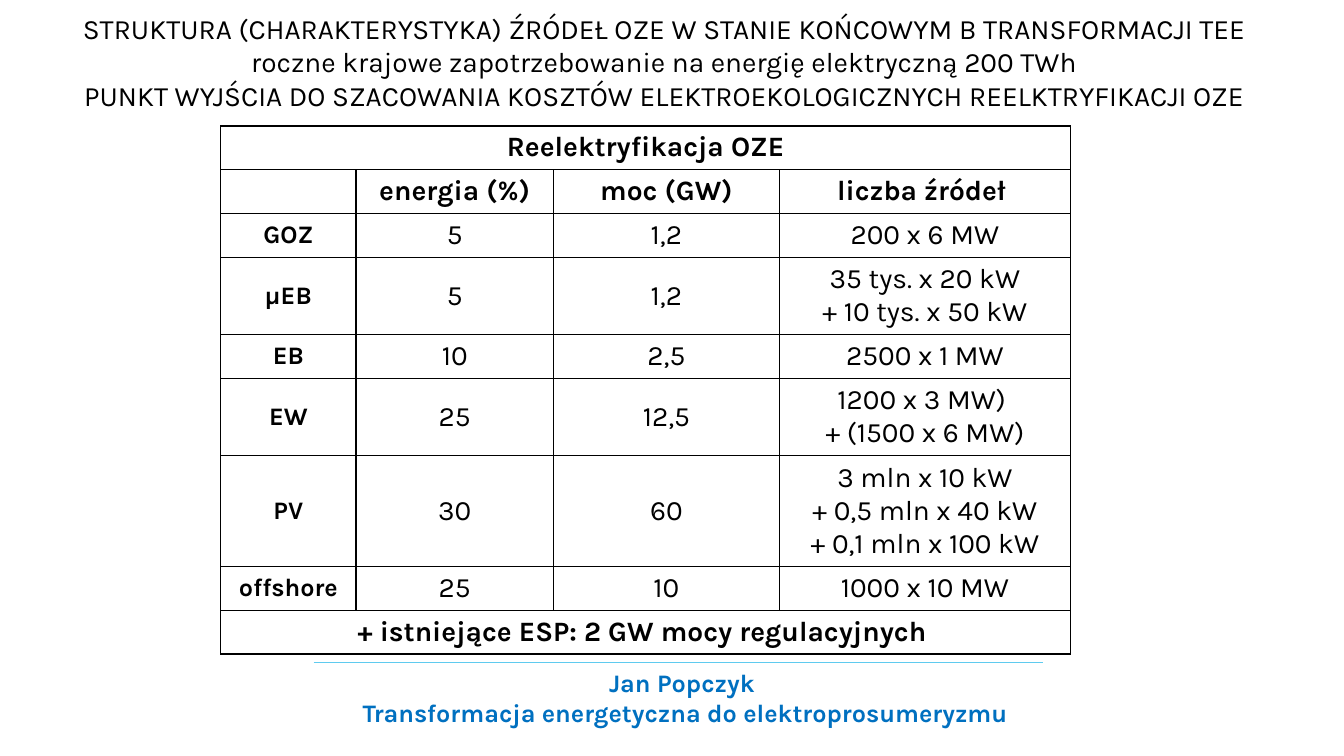
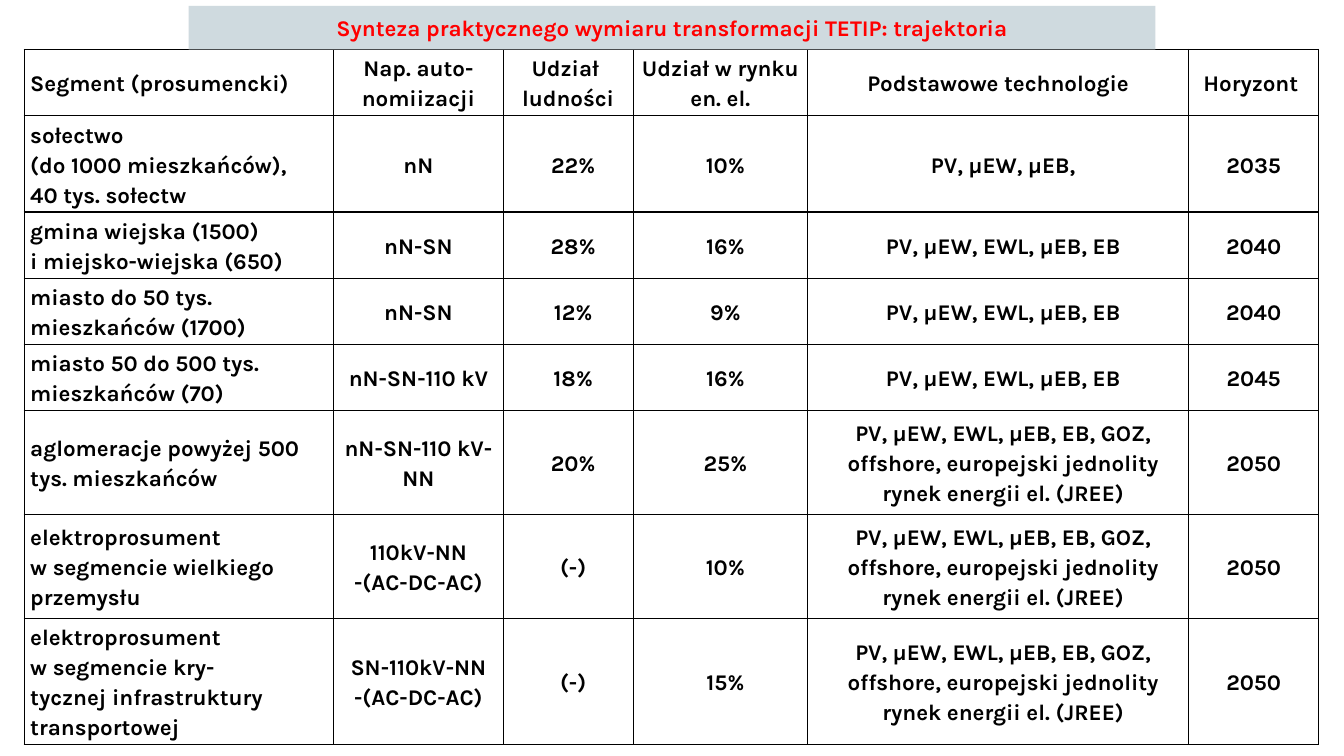
from lxml import etree
from pptx import Presentation
from pptx.dml.color import RGBColor
from pptx.enum.shapes import MSO_CONNECTOR, MSO_SHAPE
from pptx.enum.text import MSO_ANCHOR, PP_ALIGN
from pptx.oxml.ns import qn
from pptx.util import Inches, Pt

LEFT, MID = PP_ALIGN.LEFT, PP_ALIGN.CENTER
TOP, CENTER = MSO_ANCHOR.TOP, MSO_ANCHOR.MIDDLE
LINE, RECT = MSO_CONNECTOR.STRAIGHT, MSO_SHAPE.RECTANGLE

FONT = "Karla"
BLACK, WHITE, BLUE, CYAN = "000000", "FFFFFF", "0070C0", "5FCBEF"
RED, GREY = "FF0000", "CFDADF"

# In table texts \n starts a paragraph and \v breaks a line
SOURCES = [
    ["Reelektryfikacja OZE"],
    ["", "energia (%)", "moc (GW)", "liczba źródeł "],
    ["GOZ", "5", "1,2", "200 x 6 MW"],
    ["μEB", "5", "1,2", "35 tys. x 20 kW\n+ 10 tys. x 50 kW"],
    ["EB", "10", "2,5", "2500 x 1 MW"],
    ["EW", "25", "12,5", "1200 x 3 MW) \n+ (1500 x 6 MW)"],
    ["PV", "30", "60",
     "3 mln x 10 kW\n+ 0,5 mln x 40 kW\n+ 0,1 mln x 100 kW"],
    ["offshore", "25", "10", "1000 x 10 MW"],
    ["+ istniejące ESP: 2 GW mocy regulacyjnych "],
]

BASIC = "PV, µEW, EWL, µEB, EB"
FULL = BASIC + ", GOZ, offshore, europejski jednolity rynek energii el. (JREE)"
SEGMENTS = [
    ["Segment (prosumencki)", "Nap. auto-nomiizacji", "Udział \vludności",
     "Udział w rynku en. el.", "Podstawowe technologie", "Horyzont "],
    ["sołectwo \v(do 1000 mieszkańców), \v40 tys. sołectw",
     "nN", "22%", "10%", "PV, µEW, µEB,", "2035"],
    ["gmina wiejska (1500)\vi miejsko-wiejska (650)",
     "nN-SN", "28%", "16%", BASIC, "2040"],
    ["miasto do 50 tys. mieszkańców (1700)",
     "nN-SN", "12%", "9%", BASIC, "2040"],
    ["miasto 50 do 500 tys. mieszkańców (70)",
     "nN-SN-110 kV", "18%", "16%", BASIC, "2045"],
    ["aglomeracje powyżej 500 tys. mieszkańców",
     "nN-SN-110 kV-NN", "20%", "25%", FULL, "2050"],
    ["elektroprosument\vw segmencie wielkiego przemysłu",
     "110kV-NN\v-(AC-DC-AC)", "(-)", "10%", FULL, "2050"],
    ["elektroprosument\vw segmencie kry-\ntycznej infrastruktury transportowej",
     "SN-110kV-NN\v-(AC-DC-AC)", "(-)", "15%", FULL, "2050"],
]


def color(code):
    return RGBColor.from_string(code)


def write(frame, text, size, code=BLACK, bold=False, align=MID, space=None):
    frame.word_wrap = True
    frame.text = text
    for par in frame.paragraphs:
        par.alignment = align
        par.line_spacing = space
        font = par.font
        font.name, font.size, font.bold = FONT, Pt(size), bold
        font.color.rgb = color(code)


def label(slide, box, text, size, **style):
    shape = slide.shapes.add_textbox(*map(Inches, box))
    write(shape.text_frame, text, size, **style)


def border(cell):
    props = cell._tc.get_or_add_tcPr()
    for side in ("lnL", "lnR", "lnT", "lnB"):
        line = etree.SubElement(props, qn("a:" + side), w=str(Pt(1)))
        fill = etree.SubElement(line, qn("a:solidFill"))
        etree.SubElement(fill, qn("a:srgbClr"), val=BLACK)


def grid(slide, left, top, cols, rows, data, style):
    """Draw a bordered table; a row with one text spans all columns."""
    box = map(Inches, (left, top, sum(cols), sum(rows)))
    table = slide.shapes.add_table(len(rows), len(cols), *box).table
    table.first_row = table.horz_banding = False
    for col, width in zip(table.columns, cols):
        col.width = Inches(width)
    for r, (row, high, texts) in enumerate(zip(table.rows, rows, data)):
        row.height = Inches(high)
        for cell in row.cells:
            border(cell)
            cell.fill.solid()
            cell.fill.fore_color.rgb = color(WHITE)
        if len(texts) == 1:
            table.cell(r, 0).merge(table.cell(r, len(cols) - 1))
        for c, text in enumerate(texts):
            style(table.cell(r, c), r, c, text, len(texts) == 1)


def source_cell(cell, r, c, text, wide):
    cell.vertical_anchor = TOP if wide else CENTER
    side = c == 0 and not wide
    write(cell.text_frame, text, 18 if side else 20,
          bold=wide or side or r == 1)


def segment_cell(cell, r, c, text, wide):
    cell.vertical_anchor = CENTER
    cell.margin_left = cell.margin_right = Inches(0.06)
    cell.margin_top = cell.margin_bottom = Inches(0.03)
    write(cell.text_frame, text, 16, bold=True,
          align=MID if c else LEFT, space=1.15)
    if r and c in (2, 3, 4):
        cell.margin_left = Inches(0.16)


def footer(slide, left, top):
    label(slide, (left + 0.13, top, 7.11, 0.71),
          "Jan Popczyk \nTransformacja energetyczna do elektroprosumeryzmu",
          18, code=BLUE, bold=True)
    ends = (left, top, left + 7.23, top)
    rule = slide.shapes.add_connector(LINE, *map(Inches, ends))
    rule.line.color.rgb = color(CYAN)
    rule.line.width = Pt(1)
    etree.SubElement(rule._element.spPr, qn("a:effectLst"))


def banner(slide, box, text):
    shape = slide.shapes.add_shape(RECT, *map(Inches, box))
    shape.shadow.inherit = False
    shape.fill.solid()
    shape.fill.fore_color.rgb = color(GREY)
    shape.line.fill.background()
    shape.text_frame.vertical_anchor = CENTER
    write(shape.text_frame, text, 16, code=RED, bold=True)


def source_slide(slide):
    footer(slide, 3.11, 6.57)
    label(slide, (0.32, 0.06, 12.54, 1.11),
          "STRUKTURA (CHARAKTERYSTYKA) ŹRÓDEŁ OZE W STANIE KOŃCOWYM B "
          "TRANSFORMACJI TEE\v"
          "roczne krajowe zapotrzebowanie na energię elektryczną 200 TWh\v"
          "PUNKT WYJŚCIA DO SZACOWANIA KOSZTÓW ELEKTROEKOLOGICZNYCH "
          "REELKTRYFIKACJI OZE", 20)
    rows = [0.43, 0.43, 0.43, 0.76, 0.43, 0.76, 1.09, 0.43, 0.43]
    grid(slide, 2.19, 1.25, [1.34, 1.96, 2.24, 2.89], rows,
         SOURCES, source_cell)


def segment_slide(slide):
    rows = [0.65, 0.95, 0.65, 0.65, 0.65, 1.03, 1.03, 1.25]
    grid(slide, 0.24, 0.49, [3.07, 1.68, 1.29, 1.73, 3.78, 1.29], rows,
         SEGMENTS, segment_cell)
    banner(slide, (1.87, 0.06, 9.59, 0.43),
           "Synteza praktycznego wymiaru transformacji TETIP: trajektoria")


def main():
    deck = Presentation()
    deck.slide_width, deck.slide_height = Inches(13.33), Inches(7.5)
    for build in (source_slide, segment_slide):
        build(deck.slides.add_slide(deck.slide_layouts[6]))
    deck.save("out.pptx")


if __name__ == "__main__":
    main()
